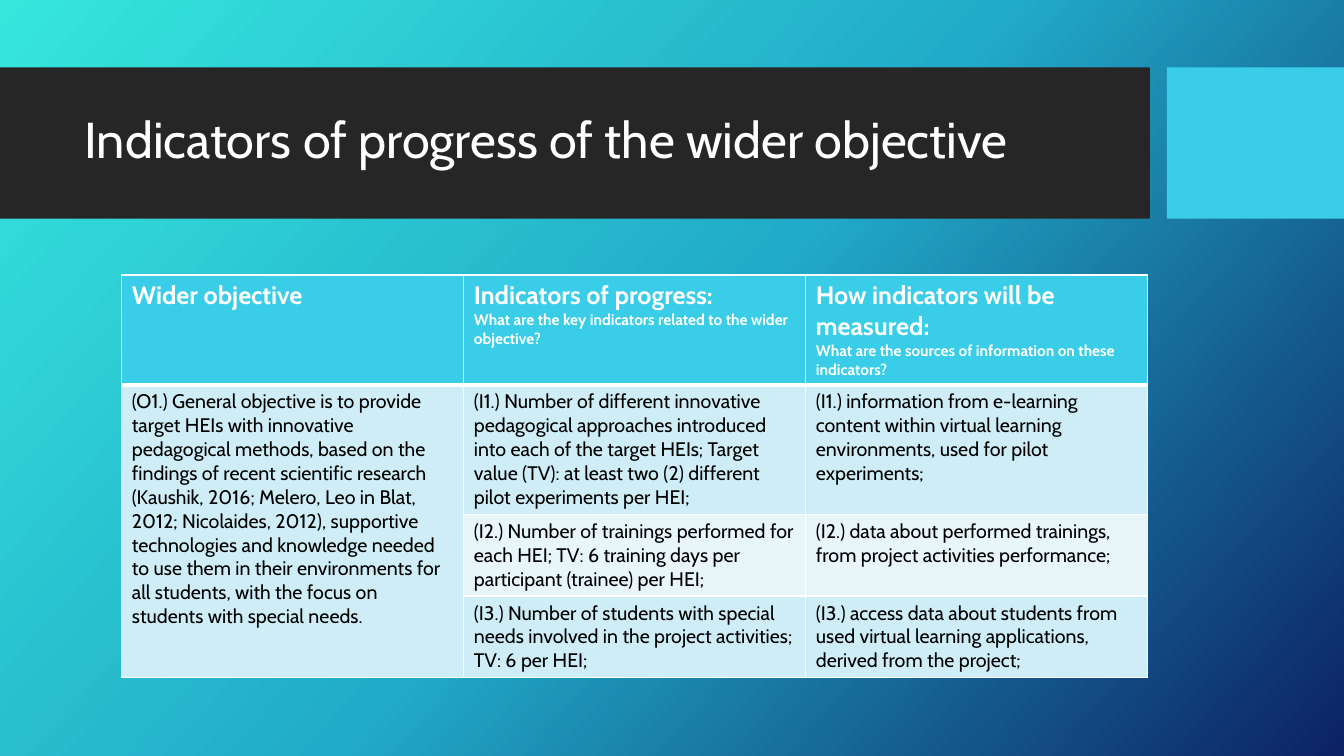
import copy
import lxml.etree
import pptx
import pptx.dml.color
import pptx.enum.shapes
import pptx.enum.text
import pptx.oxml.ns
import pptx.util

Cm = pptx.util.Cm
Pt = pptx.util.Pt
qn = pptx.oxml.ns.qn

FONT = "Cabin"
WHITE, BLACK, DARK, CYAN = "FFFFFF", "000000", "262626", "39CDE7"
BANDS = ["CEEDF6", "E8F6FA"]
BLEND = [(0, "36E6DD"), (0.5, "21ABC8"), (1, "0C2263")]
TITLE = "Indicators of progress of the wider objective"
BARS = [(0, 28.98, DARK), (29.41, 4.46, CYAN)]
HEAD = [
    ["Wider objective"],
    ["Indicators of progress:", "What are the key indicators related to the wider objective?"],
    ["How indicators will be measured:", "What are the sources of information on these indicators?"],
]
GOAL = (
    "(O1.) General objective is to provide target HEIs with innovative pedagogical methods, "
    "based on the findings of recent scientific research (Kaushik, 2016; Melero, Leo in Blat, "
    "2012; Nicolaides, 2012), supportive technologies and knowledge needed to use them in their "
    "environments for all students, with the focus on students with special needs."
)
BODY = [
    (GOAL,
     "(I1.) Number of different innovative pedagogical approaches introduced into each of the "
     "target HEIs; Target value (TV): at least two (2) different pilot experiments per HEI;",
     "(I1.) information from e-learning content within virtual learning environments, used for "
     "pilot experiments;"),
    ("",
     "(I2.) Number of trainings performed for each HEI; TV: 6 training days per participant "
     "(trainee) per HEI;",
     "(I2.) data about performed trainings, from project activities performance;"),
    ("",
     "(I3.) Number of students with special needs involved in the project activities; "
     "TV: 6 per HEI;",
     "(I3.) access data about students from used virtual learning applications, derived from "
     "the project;"),
]
WIDE = 8.62
TALL = [2.77, 3.27, 2.05, 2.05]


def shade(text):
    return pptx.dml.color.RGBColor.from_string(text)


def paint(fill, tint):
    fill.solid()
    fill.fore_color.rgb = shade(tint)


def write(para, text, size, tint, bold=False):
    run = para.add_run()
    run.text = text
    run.font.name = FONT
    run.font.size = Pt(size)
    run.font.bold = bold
    run.font.color.rgb = shade(tint)


def edge(cell, base):
    props = cell._tc.get_or_add_tcPr()
    for spot, side in enumerate("LRTB"):
        line = lxml.etree.Element(qn("a:ln" + side), w=str(Pt(base.get(side, 1))))
        fill = lxml.etree.SubElement(line, qn("a:solidFill"))
        lxml.etree.SubElement(fill, qn("a:srgbClr"), val=WHITE)
        props.insert(spot, line)


def back(slide):
    fill = slide.background.fill
    fill.gradient()
    fill.gradient_angle = 318
    stops = slide.element.find(".//" + qn("a:gsLst"))
    stops.append(copy.deepcopy(stops[-1]))
    for stop, (place, tint) in zip(fill.gradient_stops, BLEND):
        stop.position = place
        stop.color.rgb = shade(tint)


def banner(slide):
    for left, width, tint in BARS:
        bar = slide.shapes.add_shape(pptx.enum.shapes.MSO_SHAPE.RECTANGLE,
                                     Cm(left), Cm(1.7), Cm(width), Cm(3.81))
        bar.shadow.inherit = False
        paint(bar.fill, tint)
        bar.line.fill.background()
    frame = slide.shapes.add_textbox(Cm(1.88), Cm(2.08), Cm(26.7), Cm(3)).text_frame
    frame.word_wrap = True
    frame.vertical_anchor = pptx.enum.text.MSO_ANCHOR.MIDDLE
    para = frame.paragraphs[0]
    para.line_spacing = 0.9
    write(para, TITLE, 36, WHITE)


def chart(slide):
    grid = slide.shapes.add_table(len(TALL), len(HEAD), Cm(3.07), Cm(6.93),
                                  Cm(WIDE * len(HEAD)), Cm(sum(TALL))).table
    grid.horz_banding = False
    for col in grid.columns:
        col.width = Cm(WIDE)
    for row, high in zip(grid.rows, TALL):
        row.height = Cm(high)
    for c, lines in enumerate(HEAD):
        cell = grid.cell(0, c)
        paint(cell.fill, CYAN)
        edge(cell, {"B": 3})
        for n, text in enumerate(lines):
            frame = cell.text_frame
            para = frame.add_paragraph() if n else frame.paragraphs[0]
            write(para, text, 11 if n else 18, WHITE, True)
    for r, texts in enumerate(BODY, 1):
        for c, text in enumerate(texts):
            cell = grid.cell(r, c)
            paint(cell.fill, BANDS[(r - 1) % 2 if c else 0])
            edge(cell, {"T": 3} if r == 1 else {})
            if text:
                write(cell.text_frame.paragraphs[0], text, 14, BLACK)
    grid.cell(1, 0).merge(grid.cell(len(BODY), 0))


def main():
    deck = pptx.Presentation()
    deck.slide_width, deck.slide_height = Cm(33.87), Cm(19.05)
    slide = deck.slides.add_slide(deck.slide_layouts[6])
    back(slide)
    banner(slide)
    chart(slide)
    deck.save("out.pptx")


if __name__ == "__main__":
    main()
